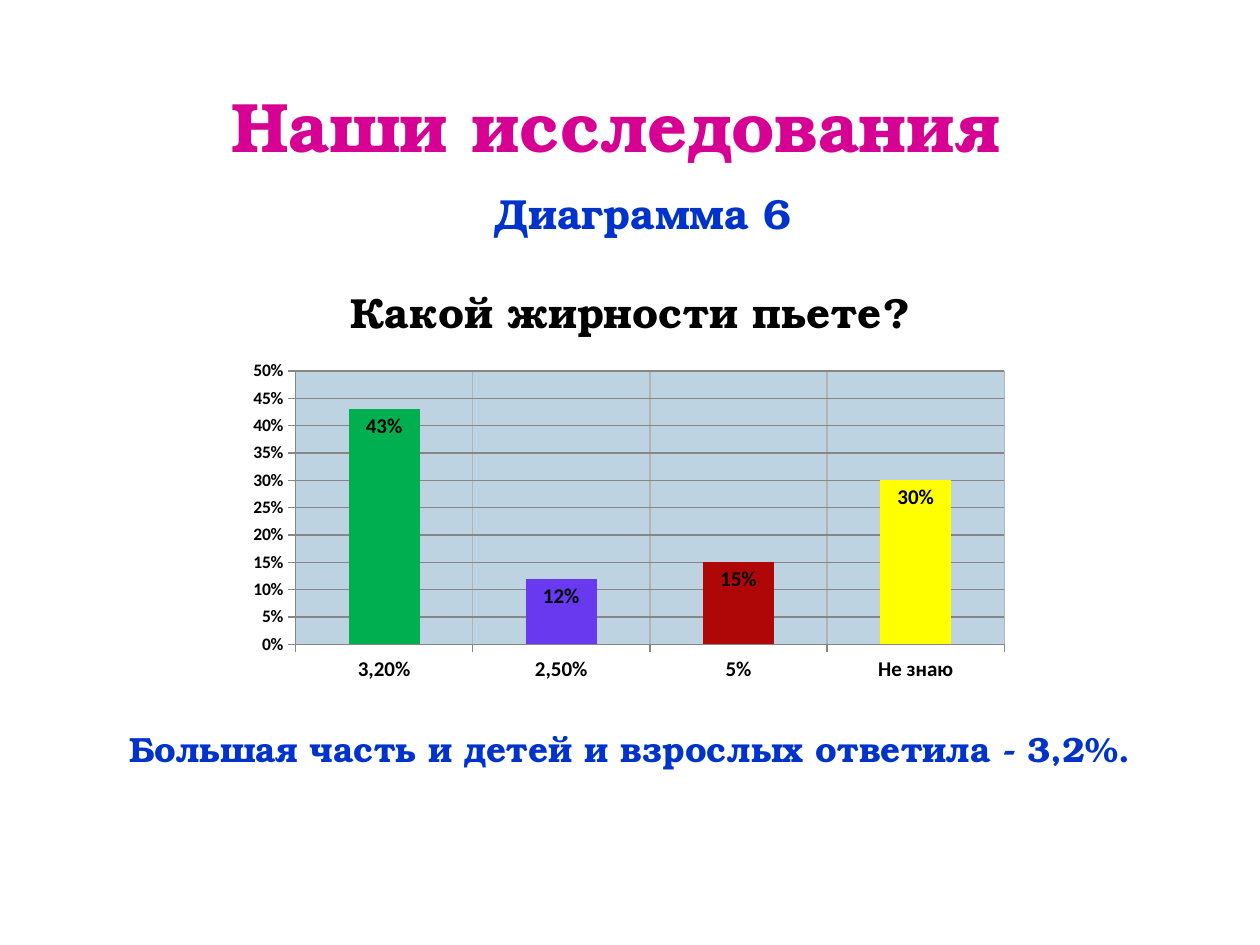
from lxml import etree
from pptx import Presentation
from pptx.chart.data import CategoryChartData
from pptx.dml.color import RGBColor
from pptx.enum.chart import XL_CHART_TYPE, XL_LABEL_POSITION, XL_TICK_MARK
from pptx.enum.text import MSO_ANCHOR, PP_ALIGN
from pptx.oxml import parse_xml
from pptx.oxml.ns import nsdecls, qn
from pptx.util import Pt

COLUMN = XL_CHART_TYPE.COLUMN_CLUSTERED
INSIDE_END = XL_LABEL_POSITION.INSIDE_END
OUTSIDE = XL_TICK_MARK.OUTSIDE
MIDDLE = MSO_ANCHOR.MIDDLE
CENTER = PP_ALIGN.CENTER

PX = 914400 / 126
SLIDE_W, SLIDE_H = 1260, 945
HEAD_FONT, CHART_FONT = "TeX Gyre Bonum", "Calibri"
COLORS = {
    "title": "D60093", "text": "0033CC", "black": "000000",
    "plot": "BED3E1", "axis": "868686", "grid": "B3B3B3",
}
QUESTION = "Какой жирности пьете?"
ANSWERS = [
    ("3,20%", 0.43, "00B050"),
    ("2,50%", 0.12, "6939EF"),
    ("5%", 0.15, "AF0707"),
    ("Не знаю", 0.30, "FFFF00"),
]


def emu(*lengths):
    return [round(n * PX) for n in lengths]


def rgb(name):
    return RGBColor.from_string(COLORS.get(name, name))


class SlideBuilder:
    def __init__(self, prs):
        self.s = prs.slides.add_slide(prs.slide_layouts[5])

    def font(self, font, size, color="black", name=HEAD_FONT):
        for key, value in {"name": name, "size": Pt(size), "bold": True}.items():
            setattr(font, key, value)
        font.color.rgb = rgb(color)

    def fill_text(self, sp, box, text, size, color, wrap):
        for key, value in zip(("left", "top", "width", "height"), emu(*box)):
            setattr(sp, key, value)
        tf = sp.text_frame
        tf.word_wrap = wrap
        tf.vertical_anchor = MIDDLE
        p = tf.paragraphs[0]
        p.alignment = CENTER
        r = p.add_run()
        r.text = text
        self.font(r.font, size, color)

    def title(self, box, text, size, color):
        self.fill_text(self.s.shapes.title, box, text, size, color, False)

    def text(self, box, text, size, color, wrap=False):
        sp = self.s.shapes.add_textbox(*emu(*box))
        self.fill_text(sp, box, text, size, color, wrap)

    def axis(self, axis, size, grid):
        axis.has_major_gridlines = True
        axis.major_tick_mark = OUTSIDE
        self.font(axis.tick_labels.font, size, name=CHART_FONT)
        for line, color in ((axis.format.line, "axis"),
                            (axis.major_gridlines.format.line, grid)):
            line.color.rgb = rgb(color)
            line.width = Pt(0.75)

    def plot_area(self, chart, layout):
        """Fix the inner plot area, in fractions of the chart, and fill it."""
        area = chart._chartSpace.chart.plotArea
        old = area.find(qn("c:layout"))
        if old is not None:
            area.remove(old)
        node = parse_xml(f"<c:layout {nsdecls('c')}><c:manualLayout/></c:layout>")
        modes = {"layoutTarget": "inner", "xMode": "edge", "yMode": "edge"}
        for key, value in {**modes, **layout}.items():
            etree.SubElement(node[0], qn(f"c:{key}"), val=str(value))
        area.insert(0, node)
        area.append(parse_xml(
            f"<c:spPr {nsdecls('c', 'a')}><a:solidFill>"
            f"<a:srgbClr val=\"{COLORS['plot']}\"/></a:solidFill></c:spPr>"))

    def column_chart(self, box, title, rows, layout):
        data = CategoryChartData(number_format="0%")
        data.categories = [name for name, _, _ in rows]
        data.add_series(title, [value for _, value, _ in rows])
        chart = self.s.shapes.add_chart(COLUMN, *emu(*box), data).chart
        self.font(chart.font, 10, name=CHART_FONT)
        chart.has_legend = False
        chart.has_title = True
        p = chart.chart_title.text_frame.paragraphs[0]
        r = p.add_run()
        r.text = title
        self.font(r.font, 24)
        chart.chart_title.include_in_layout = False

        self.axis(chart.category_axis, 12, "grid")
        values = chart.value_axis
        self.axis(values, 10, "axis")
        scale = {"minimum_scale": 0, "maximum_scale": 0.5, "major_unit": 0.05}
        for key, value in scale.items():
            setattr(values, key, value)
        values.tick_labels.number_format = "0%"
        values.tick_labels.number_format_is_linked = False

        plot = chart.plots[0]
        plot.gap_width = 150
        plot.vary_by_categories = False
        series = plot.series[0]
        for i, (_, _, color) in enumerate(rows):
            fill = series.points[i].format.fill
            fill.solid()
            fill.fore_color.rgb = rgb(color)
        labels = series.data_labels
        formats = {"show_value": True, "position": INSIDE_END,
                   "number_format": "0%", "number_format_is_linked": False}
        for key, value in formats.items():
            setattr(labels, key, value)
        self.font(labels.font, 12, name=CHART_FONT)
        self.plot_area(chart, layout)


def main():
    prs = Presentation()
    prs.slide_width, prs.slide_height = emu(SLIDE_W, SLIDE_H)
    slide = SlideBuilder(prs)
    slide.title((213, 76, 805, 97), "Наши исследования", 40, "title")
    slide.text((464, 179, 358, 68), "Диаграмма 6", 24, "text")
    slide.column_chart((241, 252, 779, 441), QUESTION, ANSWERS,
                       {"x": 0.07, "y": 0.27, "w": 0.91, "h": 0.62})
    slide.text((104, 721, 1052, 55),
               "Большая часть и детей и взрослых ответила - 3,2%.",
               20, "text", wrap=True)
    prs.save("out.pptx")


if __name__ == "__main__":
    main()
